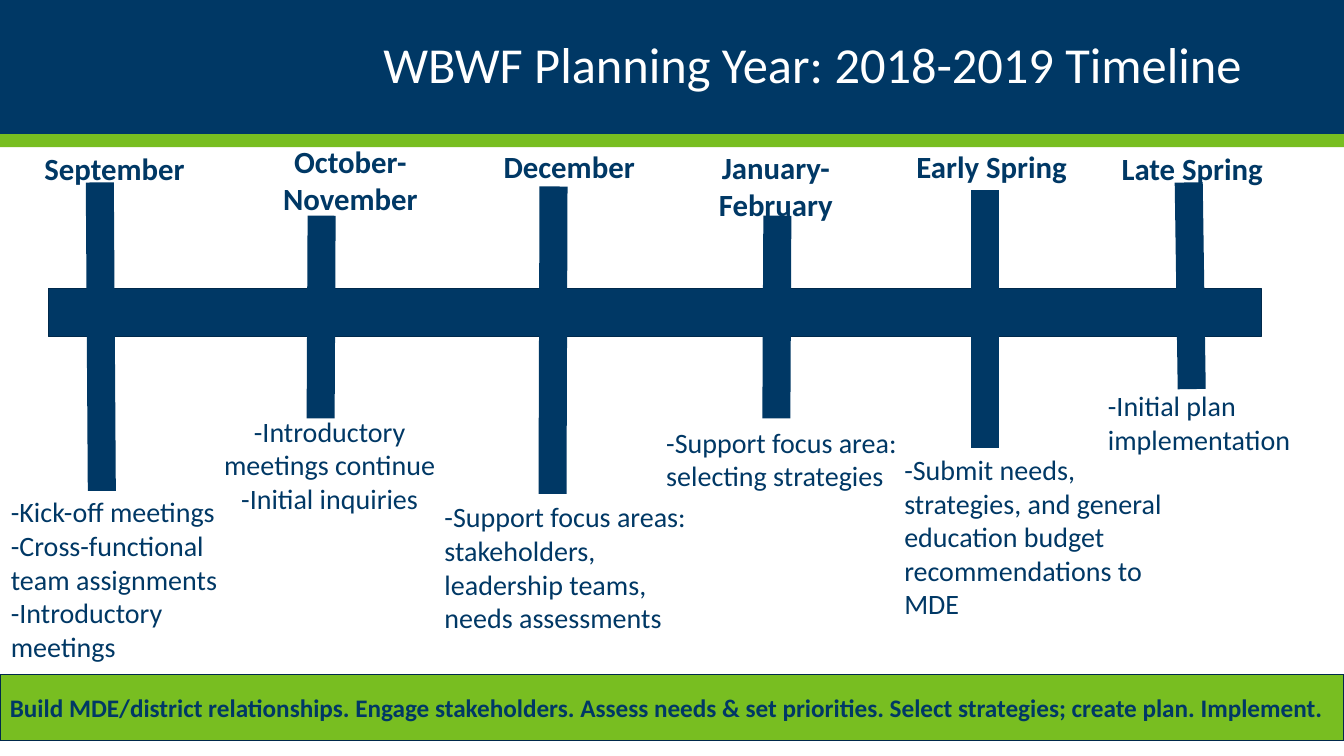
from pptx import Presentation
from pptx import util as u
from pptx.dml.color import RGBColor
from pptx.enum import shapes, text
from pptx.oxml.ns import qn
from lxml import etree

COLORS = {"navy": "003865", "green": "78BE21", "edge": "00294B", "white": "FFFFFF"}
FONT = "Calibri"
TITLE = "WBWF Planning Year: 2018-2019 Timeline"
SUMMARY = ("Build MDE/district relationships. Engage stakeholders. Assess needs & set "
           "priorities. Select strategies; create plan. Implement.")
LABEL_W = 2.33
LEFT, CENTER, RIGHT = text.PP_ALIGN.LEFT, text.PP_ALIGN.CENTER, text.PP_ALIGN.RIGHT

# Each stage: label, its (left, top, height), marker (x1, y1, x2, y2),
# notes, their box (left, top, width, height), their alignment
STAGES = [
    ("September", (-0.03, 1.44, 0.47), (0.99, 1.81, 1.01, 4.87),
     ["-Kick-off meetings", "-Cross-functional team assignments", "-Introductory meetings"],
     (0.01, 4.86, 2.4, 1.78), LEFT),
    ("October-November", (2.31, 1.37, 0.84), (3.19, 2.14, 3.18, 4.15),
     ["-Introductory meetings continue", "-Initial inquiries"],
     (1.94, 4.06, 2.66, 1.11), CENTER),
    ("December", (4.48, 1.42, 0.47), (5.49, 1.85, 5.48, 4.9),
     ["-Support focus areas: stakeholders,", "leadership teams,", "needs assessments"],
     (4.31, 4.91, 2.98, 1.45), LEFT),
    ("January-February", (6.53, 1.43, 0.84), (7.71, 2.14, 7.7, 4.15),
     ["-Support focus area: selecting strategies"],
     (6.51, 4.17, 3.17, 0.77), LEFT),
    ("Early Spring", (8.67, 1.42, 0.47), (9.77, 1.89, 9.77, 4.44),
     ["-Submit needs, strategies, and general education budget recommendations to MDE"],
     (8.87, 4.44, 2.92, 1.78), LEFT),
    ("Late Spring", (10.66, 1.44, 0.47), (11.79, 1.81, 11.82, 3.86),
     ["-Initial plan implementation"],
     (10.89, 3.81, 2.16, 0.77), LEFT),
]


def rgb(name):
    return RGBColor.from_string(COLORS[name])


def inches(values):
    return [u.Inches(v) for v in values]


def write(sp, lines, size, color="navy", bold=False, align=LEFT,
          anchor=text.MSO_ANCHOR.TOP, spacing=None):
    tf = sp.text_frame
    tf.word_wrap = True
    tf.vertical_anchor = anchor
    for i, line in enumerate(lines):
        p = tf.paragraphs[0] if i == 0 else tf.add_paragraph()
        p.alignment = align
        p.line_spacing = spacing
        r = p.add_run()
        r.text = line
        for key, value in {"name": FONT, "size": u.Pt(size), "bold": bold}.items():
            setattr(r.font, key, value)
        r.font.color.rgb = rgb(color)


def add_bar(s, box, fill, outlined=False):
    sp = s.shapes.add_shape(shapes.MSO_SHAPE.RECTANGLE, *inches(box))
    sp.shadow.inherit = False
    sp.fill.solid()
    sp.fill.fore_color.rgb = rgb(fill)
    if outlined:
        sp.line.color.rgb = rgb("edge")
        sp.line.width = u.Pt(0.85)
    else:
        sp.line.fill.background()
    return sp


def add_marker(s, ends):
    cn = s.shapes.add_connector(shapes.MSO_CONNECTOR.STRAIGHT, *inches(ends))
    cn.line.color.rgb = rgb("navy")
    cn.line.width = u.Pt(20)
    etree.SubElement(cn._element.spPr, qn("a:effectLst"))


def add_text(s, box, lines, size, **style):
    write(s.shapes.add_textbox(*inches(box)), lines, size, **style)


def main():
    prs = Presentation()
    prs.slide_width, prs.slide_height = inches((13.33, 7.5))
    s = prs.slides.add_slide(prs.slide_layouts[6])

    add_bar(s, (0, 0, 13.33, 1.33), "navy")
    add_bar(s, (0, 1.33, 13.33, 0.13), "green")
    add_text(s, (0.92, 0.17, 11.5, 1), [TITLE], 36, color="white", align=RIGHT,
             anchor=text.MSO_ANCHOR.MIDDLE, spacing=0.9)

    add_bar(s, (0.48, 2.86, 12.03, 0.48), "navy", outlined=True)
    for label, (x, y, h), marker, notes, notes_box, align in STAGES:
        add_marker(s, marker)
        add_text(s, (x, y, LABEL_W, h), [label], 22, bold=True, align=CENTER)
        add_text(s, notes_box, notes, 20, align=align)

    footer = add_bar(s, (0, 6.69, 13.33, 0.66), "green", outlined=True)
    write(footer, [SUMMARY], 18, bold=True, anchor=text.MSO_ANCHOR.MIDDLE)
    prs.save("out.pptx")


if __name__ == "__main__":
    main()
